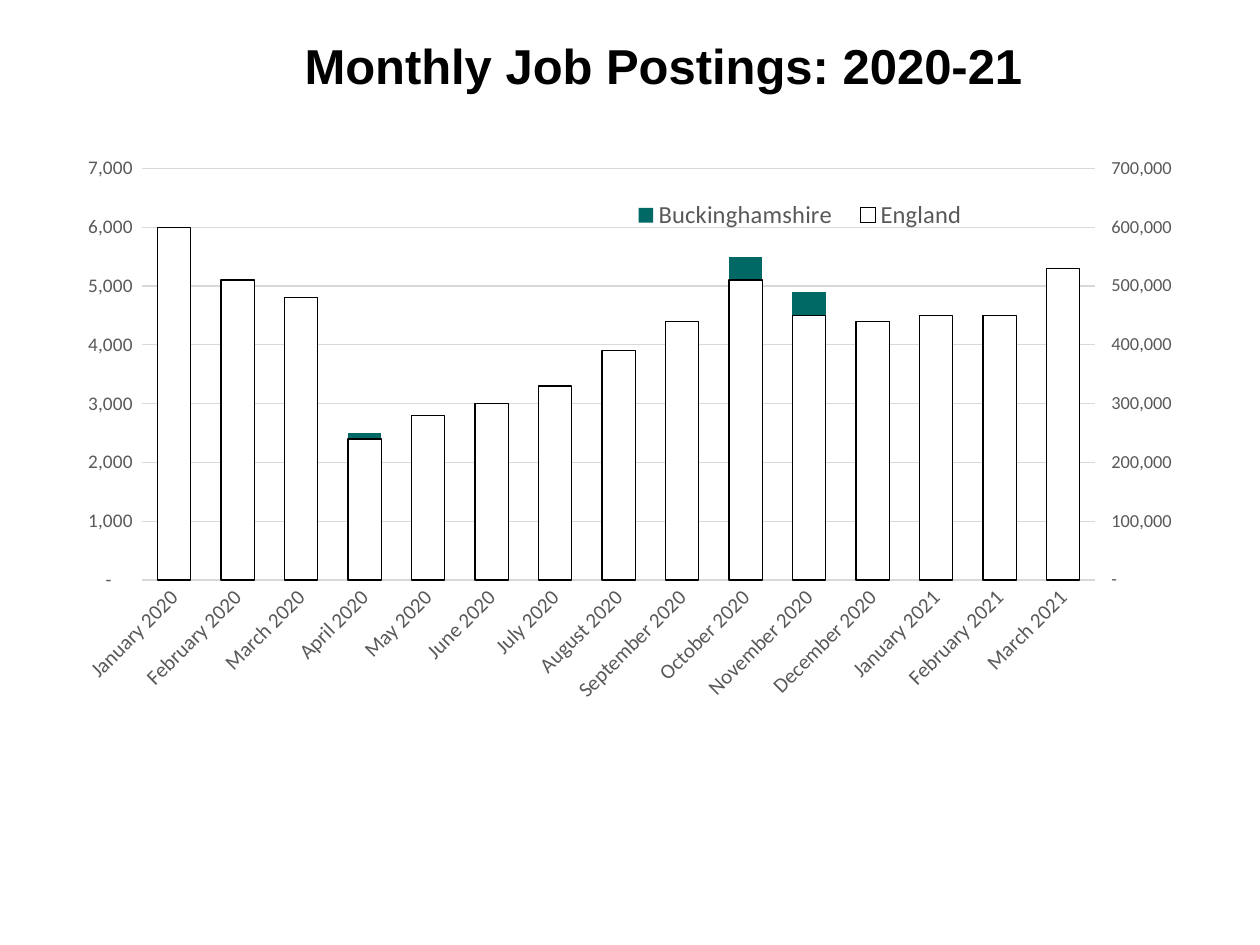
from copy import deepcopy

from lxml.etree import SubElement
from pptx import Presentation
from pptx.chart.axis import ValueAxis
from pptx.chart.data import CategoryChartData
from pptx.dml.color import RGBColor
from pptx.enum.chart import XL_CHART_TYPE, XL_LEGEND_POSITION, XL_TICK_MARK
from pptx.enum.text import MSO_ANCHOR, PP_ALIGN
from pptx.oxml import parse_xml
from pptx.oxml.ns import nsdecls, qn
from pptx.util import Pt

TITLE = "Monthly Job Postings: 2020-21 "
MONTHS_BY_YEAR = {
    2020: ["January", "February", "March", "April", "May", "June", "July",
           "August", "September", "October", "November", "December"],
    2021: ["January", "February", "March"],
}
BUCKINGHAMSHIRE = [6000, 5000, 4800, 2500, 2600, 2800, 3300, 3700,
                   4400, 5500, 4900, 4000, 4500, 4500, 5300]
ENGLAND_THOUSANDS = [600, 510, 480, 240, 280, 300, 330, 390,
                     440, 510, 450, 440, 450, 450, 530]
NUMBER_FORMAT = '_-* #,##0_-;\\-* #,##0_-;_-* "-"??_-;_-@_-'
TEAL, WHITE, BLACK = "006965", "FFFFFF", "000000"
LABEL_GRAY, GRID_GRAY = "595959", "D9D9D9"


def color(value):
    return RGBColor.from_string(value)


def style_font(font, size, value, name="Calibri"):
    font.size = Pt(size)
    font.name = name
    font.color.rgb = color(value)


def style_line(line, value):
    line.color.rgb = color(value)
    line.width = Pt(0.75)


def style_value_axis(axis, size, maximum, unit, tick):
    axis.minimum_scale = 0
    axis.maximum_scale = maximum
    axis.major_unit = unit
    axis.major_tick_mark = tick
    axis.minor_tick_mark = XL_TICK_MARK.NONE
    axis.tick_labels.number_format = NUMBER_FORMAT
    axis.tick_labels.number_format_is_linked = False
    axis.format.line.fill.background()
    style_font(axis.tick_labels.font, size, LABEL_GRAY)


def set_layout(parent, position, x, y, width, height, inner=False):
    for old_layout in parent.findall(qn("c:layout")):
        parent.remove(old_layout)
    layout = parse_xml(f"<c:layout {nsdecls('c')}/>")
    manual = SubElement(layout, qn("c:manualLayout"))
    settings = [("layoutTarget", "inner")] if inner else []
    settings += [("xMode", "edge"), ("yMode", "edge"),
                 ("x", x), ("y", y), ("w", width), ("h", height)]
    for tag, value in settings:
        SubElement(manual, qn(f"c:{tag}")).set("val", str(value))
    parent.insert(position, layout)


def move_last_series_to_right_axis(plot_area):
    left_bars = plot_area.find(qn("c:barChart"))
    category_axis = plot_area.find(qn("c:catAx"))
    value_axis = plot_area.find(qn("c:valAx"))
    right_bars = deepcopy(left_bars)
    left_bars.remove(left_bars.findall(qn("c:ser"))[-1])
    right_bars.remove(right_bars.findall(qn("c:ser"))[0])
    left_bars.addnext(right_bars)

    right_category, right_value = deepcopy(category_axis), deepcopy(value_axis)
    value_axis.addnext(right_value)
    right_value.addnext(right_category)
    new_ids = ("50010", "50020")
    for reference, new_id in zip(right_bars.findall(qn("c:axId")), new_ids):
        reference.set("val", new_id)
    for axis, own, other in ((right_category, *new_ids),
                             (right_value, *reversed(new_ids))):
        axis.find(qn("c:axId")).set("val", own)
        axis.find(qn("c:crossAx")).set("val", other)
    right_category.find(qn("c:delete")).set("val", "1")
    right_value.find(qn("c:axPos")).set("val", "r")
    right_value.find(qn("c:crosses")).set("val", "max")
    return ValueAxis(right_value)


def add_title(slide):
    title = slide.shapes.add_textbox(Pt(59), Pt(-8), Pt(648), Pt(90))
    frame = title.text_frame
    frame.word_wrap = True
    frame.vertical_anchor = MSO_ANCHOR.MIDDLE
    paragraph = frame.paragraphs[0]
    paragraph.alignment = PP_ALIGN.CENTER
    run = paragraph.add_run()
    run.text = TITLE
    run.font.bold = True
    style_font(run.font, 28, BLACK, "Arial")


def add_postings_chart(slide):
    data = CategoryChartData(number_format=NUMBER_FORMAT)
    data.categories = [f"{month} {year}" for year, months in MONTHS_BY_YEAR.items()
                       for month in months]
    data.add_series("Buckinghamshire", BUCKINGHAMSHIRE)
    data.add_series("England", [value * 1000 for value in ENGLAND_THOUSANDS])
    chart = slide.shapes.add_chart(XL_CHART_TYPE.COLUMN_CLUSTERED,
                                   Pt(36), Pt(82), Pt(648), Pt(356.4), data).chart
    chart.has_title = False
    style_font(chart.font, 10, BLACK)

    plot = chart.plots[0]
    plot.gap_width = 91
    plot.vary_by_categories = False
    for series, fill in zip(plot.series, (TEAL, WHITE)):
        series.invert_if_negative = False
        series.format.fill.solid()
        series.format.fill.fore_color.rgb = color(fill)
    style_line(plot.series[1].format.line, BLACK)

    months = chart.category_axis
    months.major_tick_mark = XL_TICK_MARK.NONE
    months.minor_tick_mark = XL_TICK_MARK.NONE
    style_line(months.format.line, GRID_GRAY)
    style_font(months.tick_labels.font, 12, LABEL_GRAY)
    months._element.find(qn("c:txPr")).find(qn("a:bodyPr")).set("rot", "-2700000")

    plot_area = chart._chartSpace.chart.plotArea
    left_axis = chart.value_axis
    right_axis = move_last_series_to_right_axis(plot_area)
    left_axis.has_major_gridlines = True
    style_line(left_axis.major_gridlines.format.line, GRID_GRAY)
    style_value_axis(left_axis, 11, 7000, 1000, XL_TICK_MARK.NONE)
    right_axis.has_major_gridlines = False
    style_value_axis(right_axis, 10.5, 700000, 100000, XL_TICK_MARK.OUTSIDE)
    set_layout(plot_area, 0, 0.07, 0.04, 0.84, 0.66, inner=True)

    chart.has_legend = True
    chart.legend.position = XL_LEGEND_POSITION.BOTTOM
    chart.legend.include_in_layout = False
    style_font(chart.legend.font, 14, LABEL_GRAY)
    set_layout(chart.legend._element, 1, 0.49, 0.08, 0.32, 0.07)


def main():
    presentation = Presentation()
    presentation.slide_width, presentation.slide_height = Pt(720), Pt(540)
    slide = presentation.slides.add_slide(presentation.slide_layouts[6])
    add_title(slide)
    add_postings_chart(slide)
    presentation.save("out.pptx")


if __name__ == "__main__":
    main()
